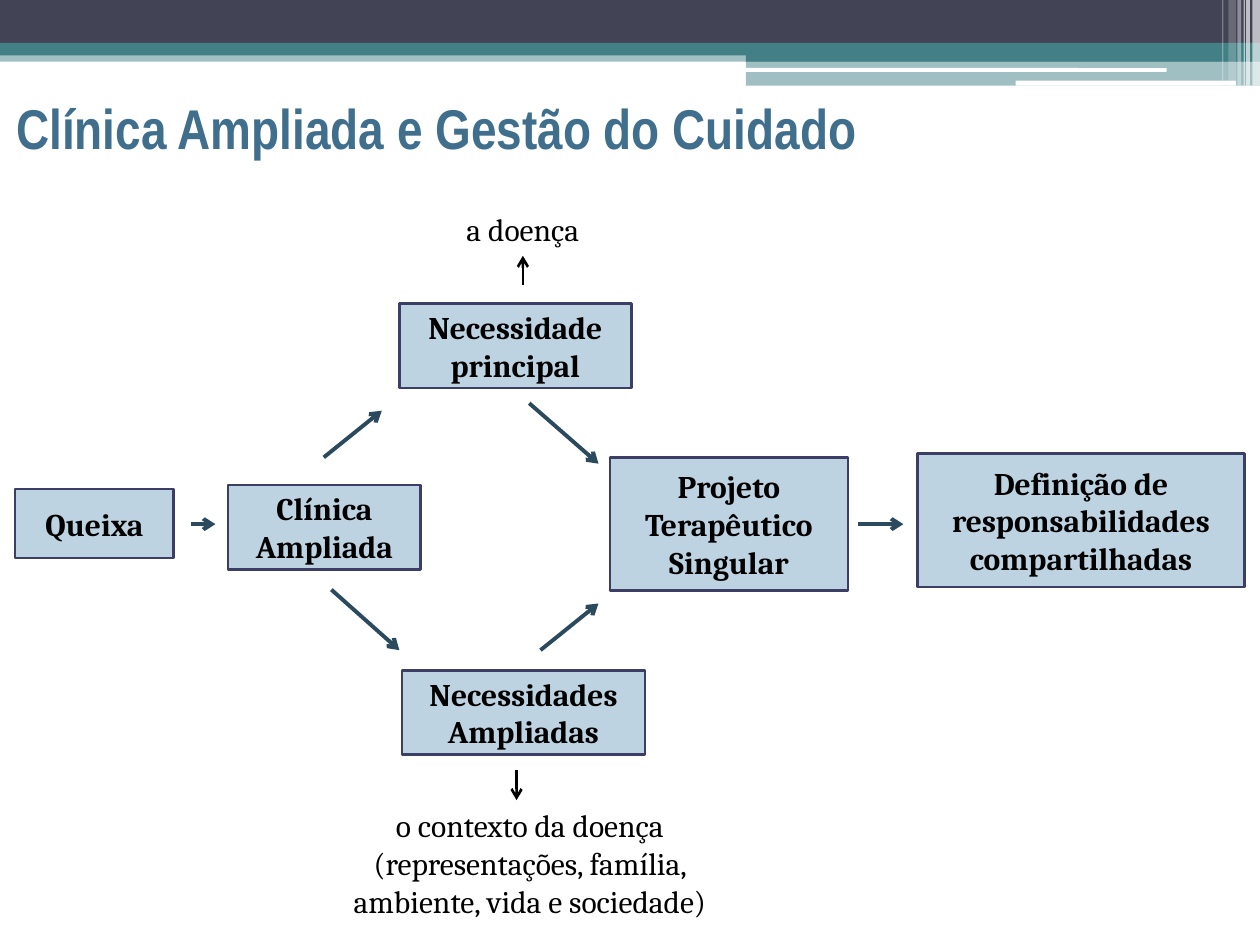
from typing import NamedTuple, Optional

from lxml.etree import SubElement
from pptx import Presentation
from pptx.dml.color import RGBColor
from pptx.enum.shapes import MSO_CONNECTOR, MSO_SHAPE
from pptx.enum.text import MSO_ANCHOR, PP_ALIGN
from pptx.oxml.ns import qn
from pptx.util import Inches, Pt

SLATE = RGBColor(0x42, 0x44, 0x56)
TEAL = RGBColor(0x43, 0x80, 0x86)
WHITE = RGBColor(0xFF, 0xFF, 0xFF)
BLACK = RGBColor(0x00, 0x00, 0x00)
TITLE_BLUE = RGBColor(0x40, 0x6F, 0x8D)
BOX_FILL = RGBColor(0xBE, 0xD3, 0xE1)
BOX_LINE = RGBColor(0x3D, 0x3E, 0x66)
ARROW_BLUE = RGBColor(0x2B, 0x4A, 0x5E)


class Band(NamedTuple):
    left: float
    top: float
    width: float
    height: float
    color: RGBColor
    alpha: int = 100
    rounded: bool = False


class Box(NamedTuple):
    text: str
    left: float
    top: float
    width: float
    height: float
    fill: Optional[RGBColor] = BOX_FILL
    line: RGBColor = BOX_LINE
    line_width: float = 1.5
    bold: bool = True
    anchor: MSO_ANCHOR = MSO_ANCHOR.MIDDLE


class Arrow(NamedTuple):
    x1: float
    y1: float
    x2: float
    y2: float
    color: RGBColor = ARROW_BLUE
    width: float = 2.25


STRIPES = [
    (9.94, 0.06, 0.68, 65),
    (9.89, 0.03, 0.68, 65),
    (9.87, 0.01, 0.68, 60),
    (9.82, 0.03, 0.68, 40),
    (9.75, 0.06, 0.64, 20),
    (9.7, 0.01, 0.64, 30),
]
BANDS = [
    Band(0, 0.4, 10, 0.09, TEAL, 50),
    Band(0, 0, 10, 0.34, SLATE),
    Band(0, 0.34, 10, 0.1, TEAL),
    Band(5.92, 0.39, 4.08, 0.1, TEAL),
    Band(5.92, 0.48, 4.08, 0.2, TEAL, 50),
    Band(5.91, 0.54, 3.35, 0.03, WHITE, rounded=True),
    Band(8.06, 0.64, 1.75, 0.04, WHITE, rounded=True),
] + [Band(x, 0, w, h, WHITE, alpha) for x, w, h, alpha in STRIPES]

BOXES = [
    Box("Queixa", 0.12, 3.88, 1.26, 0.55),
    Box("Necessidades Ampliadas", 3.19, 5.32, 1.93, 0.67),
    Box("Clínica Ampliada", 1.81, 3.85, 1.53, 0.67),
    Box("Necessidade principal", 3.17, 2.41, 1.84, 0.67),
    Box("Projeto Terapêutico Singular", 4.84, 3.63, 1.89, 1.06),
    Box("Definição de responsabilidades compartilhadas", 7.28, 3.6, 2.6, 1.06),
    Box("a doença", 3.3, 1.62, 1.7, 0.4,
        None, WHITE, 0.75, False, MSO_ANCHOR.TOP),
    Box("o contexto da doença (representações, família, ambiente, vida e sociedade)",
        2.51, 6.35, 3.39, 1.01, WHITE, WHITE, 0.75, False, MSO_ANCHOR.TOP),
]

ARROWS = [
    Arrow(1.52, 4.16, 1.71, 4.16),
    Arrow(6.81, 4.16, 7.17, 4.16),
    Arrow(2.63, 4.68, 3.17, 5.16),
    Arrow(2.57, 3.63, 3.03, 3.26),
    Arrow(4.29, 5.16, 4.75, 4.79),
    Arrow(4.2, 3.2, 4.75, 3.68),
    Arrow(4.1, 6.11, 4.1, 6.35, BLACK, 1.5),
    Arrow(4.15, 2.26, 4.15, 2.03, BLACK, 1.5),
]


def draw_band(s, band: Band) -> None:
    kind = MSO_SHAPE.ROUNDED_RECTANGLE if band.rounded else MSO_SHAPE.RECTANGLE
    sp = s.shapes.add_shape(kind, Inches(band.left), Inches(band.top),
                            Inches(band.width), Inches(band.height))
    sp.shadow.inherit = False
    sp.line.fill.background()
    sp.fill.solid()
    sp.fill.fore_color.rgb = band.color
    if band.alpha < 100:
        color = sp.fill._xPr.find(qn("a:solidFill"))[0]
        SubElement(color, qn("a:alpha"), val=str(band.alpha * 1000))


def write_text(sp, text: str, font: str, size: float, color: RGBColor,
               bold: bool, align: PP_ALIGN, anchor: MSO_ANCHOR) -> None:
    tf = sp.text_frame
    tf.word_wrap = True
    tf.vertical_anchor = anchor
    p = tf.paragraphs[0]
    p.text = text
    p.alignment = align
    p.font.name = font
    p.font.size = Pt(size)
    p.font.bold = bold
    p.font.color.rgb = color


def draw_title(s, text: str) -> None:
    sp = s.shapes.add_textbox(Inches(0.03), Inches(0.6), Inches(8.75), Inches(0.81))
    write_text(sp, text, "Arial Narrow", 32, TITLE_BLUE, True,
               PP_ALIGN.LEFT, MSO_ANCHOR.MIDDLE)


def draw_box(s, box: Box) -> None:
    sp = s.shapes.add_shape(MSO_SHAPE.RECTANGLE, Inches(box.left), Inches(box.top),
                            Inches(box.width), Inches(box.height))
    sp.shadow.inherit = False
    if box.fill is None:
        sp.fill.background()
    else:
        sp.fill.solid()
        sp.fill.fore_color.rgb = box.fill
    sp.line.color.rgb = box.line
    sp.line.width = Pt(box.line_width)
    write_text(sp, box.text, "Cambria", 18, BLACK, box.bold,
               PP_ALIGN.CENTER, box.anchor)


def draw_arrow(s, arrow: Arrow) -> None:
    sp = s.shapes.add_connector(MSO_CONNECTOR.STRAIGHT,
                                Inches(arrow.x1), Inches(arrow.y1),
                                Inches(arrow.x2), Inches(arrow.y2))
    sp.line.color.rgb = arrow.color
    sp.line.width = Pt(arrow.width)
    SubElement(sp.line._get_or_add_ln(), qn("a:tailEnd"), type="arrow")
    SubElement(sp._element.spPr, qn("a:effectLst"))


def main() -> None:
    prs = Presentation()
    prs.slide_width = Inches(10)
    prs.slide_height = Inches(7.5)
    s = prs.slides.add_slide(prs.slide_layouts[6])
    for band in BANDS:
        draw_band(s, band)
    draw_title(s, "Clínica Ampliada e Gestão do Cuidado")
    for box in BOXES:
        draw_box(s, box)
    for arrow in ARROWS:
        draw_arrow(s, arrow)
    prs.save("out.pptx")


if __name__ == "__main__":
    main()
